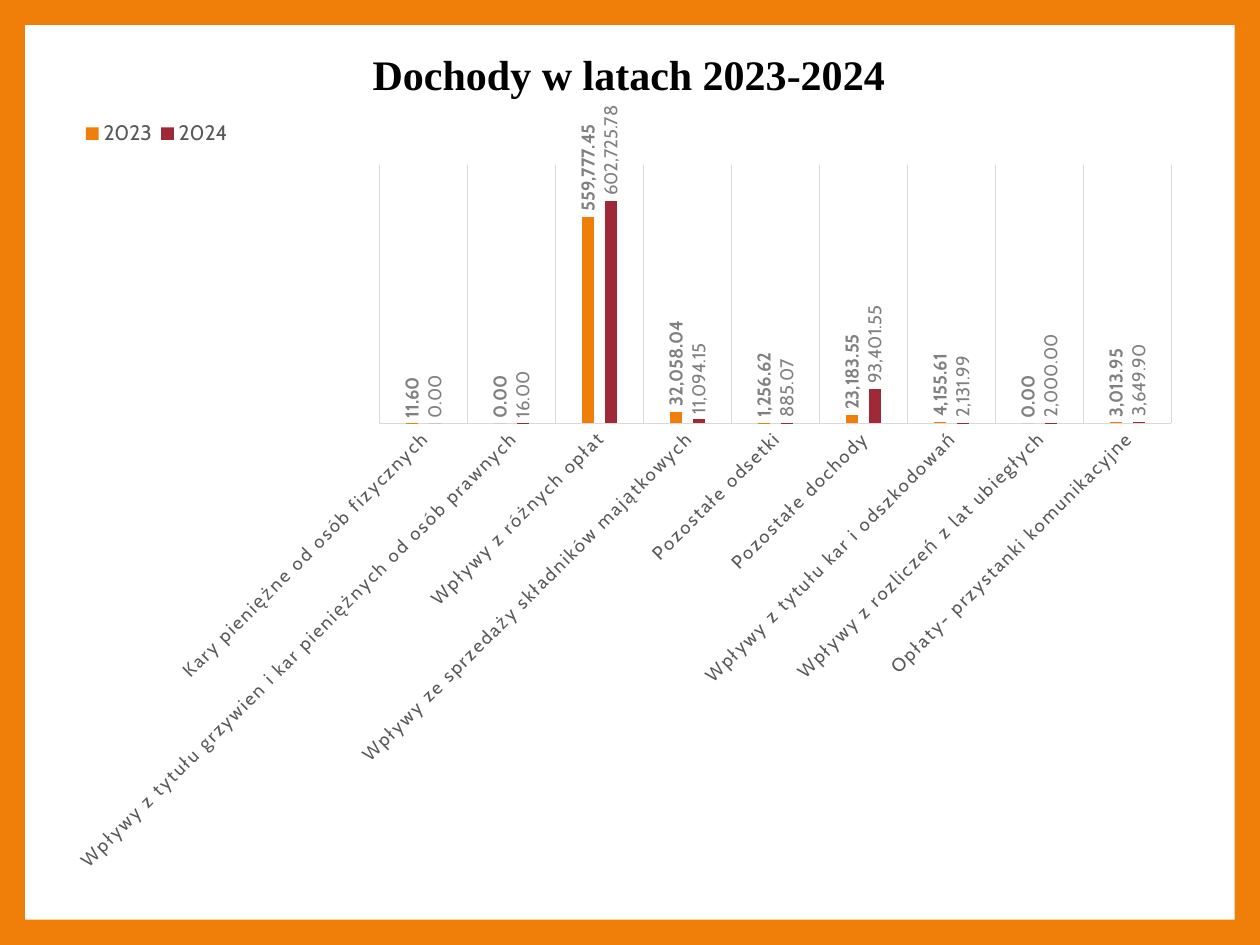
from lxml import etree
from pptx import Presentation
from pptx.chart.data import CategoryChartData
from pptx.dml.color import RGBColor
from pptx.enum.chart import XL_CHART_TYPE, XL_LABEL_POSITION, XL_LEGEND_POSITION, XL_TICK_MARK
from pptx.enum.shapes import MSO_SHAPE
from pptx.enum.text import MSO_ANCHOR, MSO_AUTO_SIZE, PP_ALIGN
from pptx.oxml.ns import qn
from pptx.util import Cm, Pt

COLUMNS = XL_CHART_TYPE.COLUMN_CLUSTERED
OUTSIDE_END = XL_LABEL_POSITION.OUTSIDE_END
LEGEND_TOP = XL_LEGEND_POSITION.TOP
NO_TICK = XL_TICK_MARK.NONE
RECTANGLE = MSO_SHAPE.RECTANGLE
MIDDLE = MSO_ANCHOR.MIDDLE
NO_AUTOFIT = MSO_AUTO_SIZE.NONE
CENTER = PP_ALIGN.CENTER

ORANGE = RGBColor(0xF0, 0x7F, 0x09)
DARK_RED = RGBColor(0x9F, 0x29, 0x36)
WHITE = RGBColor(0xFF, 0xFF, 0xFF)
BLACK = RGBColor(0x00, 0x00, 0x00)
DARK_GRAY = RGBColor(0x59, 0x59, 0x59)
GRAY = RGBColor(0x80, 0x80, 0x80)
LIGHT_GRAY = RGBColor(0xD9, 0xD9, 0xD9)

NUMBER_FORMAT = "#,##0.00"
INCOME = [
    ("Kary pieniężne od osób fizycznych", 11.6, 0),
    ("Wpływy z tytułu grzywien i kar pieniężnych od osób prawnych", 0, 16),
    ("Wpływy z różnych opłat", 559777.45, 602725.78),
    ("Wpływy ze sprzedaży składników majątkowych", 32058.04, 11094.15),
    ("Pozostałe odsetki", 1256.62, 885.07),
    ("Pozostałe dochody", 23183.55, 93401.55),
    ("Wpływy z tytułu kar i odszkodowań", 4155.61, 2131.99),
    ("Wpływy z rozliczeń z lat ubiegłych", 0, 2000),
    ("Opłaty- przystanki komunikacyjne", 3013.95, 3649.9),
]


class SlideBuilder:
    chart_font = "Cabin"
    title_font = "Times New Roman"

    def __init__(self, slide):
        self.slide = slide

    def background(self, color):
        fill = self.slide.background.fill
        fill.solid()
        fill.fore_color.rgb = color

    def panel(self, left, top, width, height):
        shape = self.slide.shapes.add_shape(RECTANGLE, left, top, width, height)
        shape.shadow.inherit = False
        shape.fill.solid()
        shape.fill.fore_color.rgb = WHITE
        shape.line.fill.background()
        self.slide.shapes.title._element.addprevious(shape._element)

    def title(self, text, left, top, width, height):
        title = self.slide.shapes.title
        title.left, title.top, title.width, title.height = left, top, width, height
        frame = title.text_frame
        frame.text = text
        frame.vertical_anchor = MIDDLE
        frame.auto_size = NO_AUTOFIT
        paragraph = frame.paragraphs[0]
        paragraph.alignment = CENTER
        paragraph.line_spacing = 0.9
        self.style(paragraph.font, 24, BLACK, True, self.title_font)

    def style(self, font, size, color, bold=False, name=chart_font):
        font.name = name
        font.size = Pt(size)
        font.bold = bold
        font.color.rgb = color

    def place(self, element, position, target=None):
        layout = element.find(qn("c:layout"))
        if layout is None:
            layout = etree.Element(qn("c:layout"))
            anchor = element.find(qn("c:legendPos"))
            if anchor is None:
                element.insert(0, layout)
            else:
                anchor.addnext(layout)
        manual = etree.SubElement(layout, qn("c:manualLayout"))
        settings = [("layoutTarget", target)] if target else []
        settings += [("xMode", "edge"), ("yMode", "edge"), *zip("xywh", position)]
        for tag, value in settings:
            etree.SubElement(manual, qn(f"c:{tag}")).set("val", str(value))

    def rotate(self, text_parent, degrees):
        body = text_parent._element.find(f".//{qn('c:txPr')}/{qn('a:bodyPr')}")
        body.set("rot", str(degrees * 60000))
        body.set("vert", "horz")

    def line(self, line_format):
        line_format.color.rgb = LIGHT_GRAY
        line_format.width = Pt(0.75)

    def category_axis(self, axis):
        axis.major_tick_mark = axis.minor_tick_mark = NO_TICK
        axis.has_major_gridlines = True
        self.line(axis.format.line)
        self.line(axis.major_gridlines.format.line)
        self.style(axis.tick_labels.font, 10.6, DARK_GRAY)
        self.rotate(axis, -45)
        axis._element.find(f".//{qn('a:defRPr')}").set("spc", "120")

    def value_axis(self, axis):
        axis.minimum_scale = 0
        axis.maximum_scale = 700000
        axis.has_major_gridlines = False
        axis.tick_labels.number_format = NUMBER_FORMAT
        axis.tick_labels.number_format_is_linked = False
        axis.visible = False

    def series(self, series, color, bold):
        series.format.fill.solid()
        series.format.fill.fore_color.rgb = color
        series.invert_if_negative = False
        labels = series.data_labels
        labels.show_value = True
        labels.position = OUTSIDE_END
        labels.number_format = NUMBER_FORMAT
        labels.number_format_is_linked = False
        self.style(labels.font, 10.6, GRAY, bold)
        self.rotate(labels, -90)

    def column_chart(self, left, top, width, height):
        categories, values_2023, values_2024 = zip(*INCOME)
        data = CategoryChartData(number_format=NUMBER_FORMAT)
        data.categories = categories
        data.add_series("2023", values_2023)
        data.add_series("2024", values_2024)
        chart = self.slide.shapes.add_chart(COLUMNS, left, top, width, height, data).chart
        chart.has_title = False
        self.style(chart.font, 10, BLACK)
        chart.has_legend = True
        chart.legend.position = LEGEND_TOP
        chart.legend.include_in_layout = False
        self.style(chart.legend.font, 12, DARK_GRAY)
        self.place(chart.legend._element, (0.02, 0.01, 0.14, 0.05))
        plot = chart.plots[0]
        plot.gap_width = 444
        plot.overlap = -90
        plot.vary_by_categories = False
        self.place(plot._element.getparent(), (0.285, 0.075, 0.694, 0.33), "inner")
        self.category_axis(chart.category_axis)
        self.value_axis(chart.value_axis)
        for series, color, bold in zip(plot.series, (ORANGE, DARK_RED), (True, False)):
            self.series(series, color, bold)


def main():
    presentation = Presentation()
    presentation.slide_width = Cm(25.4)
    presentation.slide_height = Cm(19.05)
    builder = SlideBuilder(presentation.slides.add_slide(presentation.slide_layouts[5]))
    builder.background(ORANGE)
    builder.panel(Cm(0.51), Cm(0.51), Cm(24.38), Cm(18.03))
    builder.title("Dochody w latach 2023-2024", Cm(2.39), Cm(0.74), Cm(20.57), Cm(1.6))
    builder.column_chart(Cm(1.09), Cm(2.13), Cm(23.01), Cm(15.8))
    presentation.save("out.pptx")


if __name__ == "__main__":
    main()
